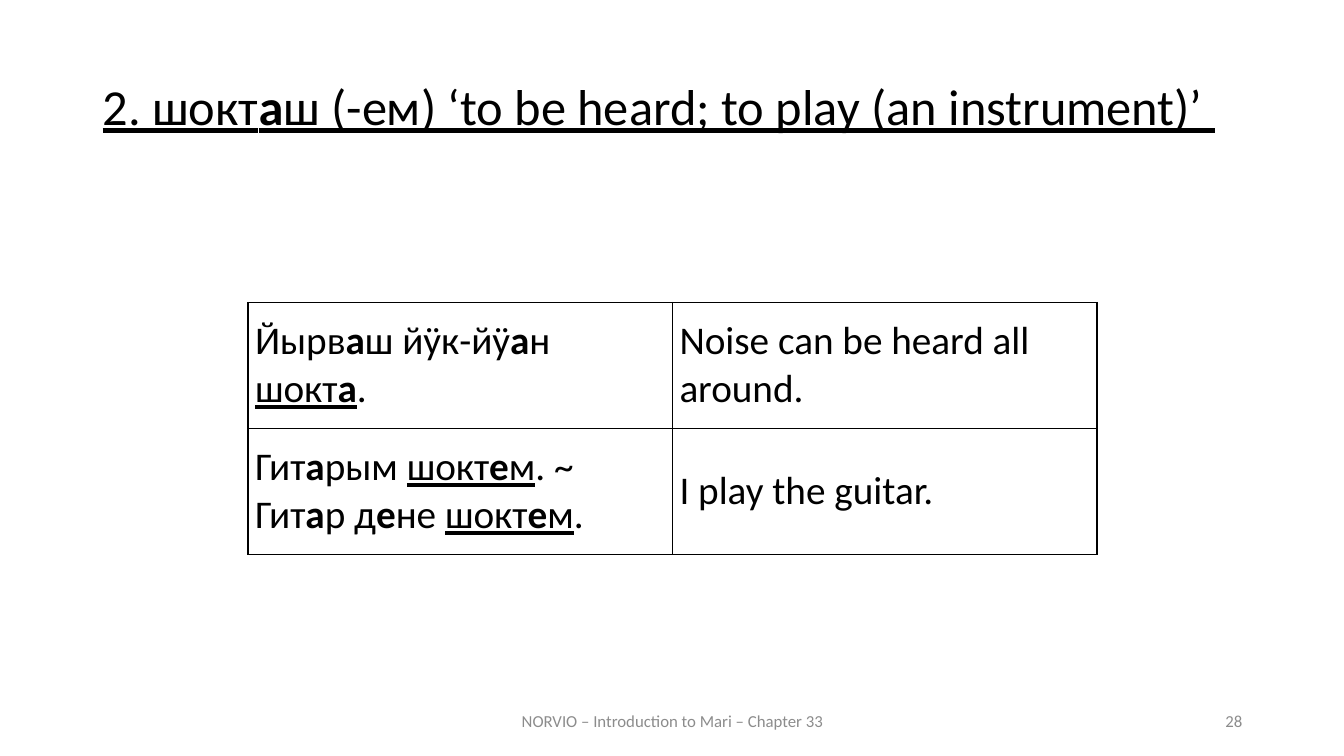
import pptx
import pptx.dml.color
import pptx.enum.text
import pptx.oxml
import pptx.oxml.ns
import pptx.util

PX = 9144  # EMU per px, 100 px to the inch
ALIGN = pptx.enum.text.PP_ALIGN
MIDDLE = pptx.enum.text.MSO_ANCHOR.MIDDLE
TOP = pptx.enum.text.MSO_ANCHOR.TOP


def color(value):
    return pptx.dml.color.RGBColor.from_string(value)


def write(frame, text, size, ink="000000", align=ALIGN.LEFT, spacing=1.0, before=0):
    """Fill a text frame; * toggles bold, _ toggles underline."""
    frame.word_wrap = True
    for number, line in enumerate(text.split("\n")):
        para = frame.paragraphs[0] if number == 0 else frame.add_paragraph()
        para.alignment = align
        para.line_spacing = spacing
        para.space_before = pptx.util.Pt(before)
        underlined = False
        for bold_index, piece in enumerate(line.split("*")):
            for part_index, part in enumerate(piece.split("_")):
                if part_index:
                    underlined = not underlined
                if not part:
                    continue
                span = para.add_run()
                span.text = part
                span.font.name = "Calibri"
                span.font.size = pptx.util.Pt(size)
                span.font.color.rgb = color(ink)
                span.font.bold = bold_index % 2 == 1
                span.font.underline = underlined


deck = pptx.Presentation()
deck.slide_width, deck.slide_height = 1333 * PX, 750 * PX
page = deck.slides.add_slide(deck.slide_layouts[6])

# Heading and footer
heading = dict(size=36, align=ALIGN.JUSTIFY, spacing=0.9, before=12)
footer = dict(size=12, ink="8C8C8C")
texts = [
    ((92, 76, 1150, 83), TOP,
     "_2. шокт*а*ш (-ем) ‘to be heard; to play (an instrument)’ _", heading),
    ((442, 695, 450, 40), MIDDLE,
     "NORVIO – Introduction to Mari – Chapter 33", dict(footer, align=ALIGN.CENTER)),
    ((942, 695, 300, 40), MIDDLE, "28", dict(footer, align=ALIGN.RIGHT)),
]
for place, anchor, text, style in texts:
    box = page.shapes.add_textbox(*(length * PX for length in place))
    box.text_frame.vertical_anchor = anchor
    write(box.text_frame, text, **style)

# Example sentences with translations
examples = [
    ("Йырв*а*ш йӱк-йӱ*а*н _шокт*а*_.", "Noise can be heard all around."),
    ("Гит*а*рым _шокт*е*м_. ~\nГит*а*р д*е*не _шокт*е*м_.", "I play the guitar."),
]
table = page.shapes.add_table(2, 2, 246 * PX, 300 * PX, 842 * PX, 250 * PX).table
table.first_row = False
table.horz_banding = False
for row, sentences in enumerate(examples):
    for column, sentence in enumerate(sentences):
        cell = table.cell(row, column)
        cell.vertical_anchor = MIDDLE
        cell.margin_left = cell.margin_right = 7 * PX
        cell.margin_top = cell.margin_bottom = 0
        write(cell.text_frame, sentence, 28)
        # Borders come before the fill in the cell properties
        properties = cell._tc.get_or_add_tcPr()
        for side in ("lnL", "lnR", "lnT", "lnB"):
            properties.append(pptx.oxml.parse_xml(
                f'<a:{side} {pptx.oxml.ns.nsdecls("a")} w="12700"><a:solidFill>'
                f'<a:srgbClr val="000000"/></a:solidFill></a:{side}>'))
        cell.fill.background()

deck.save("out.pptx")
